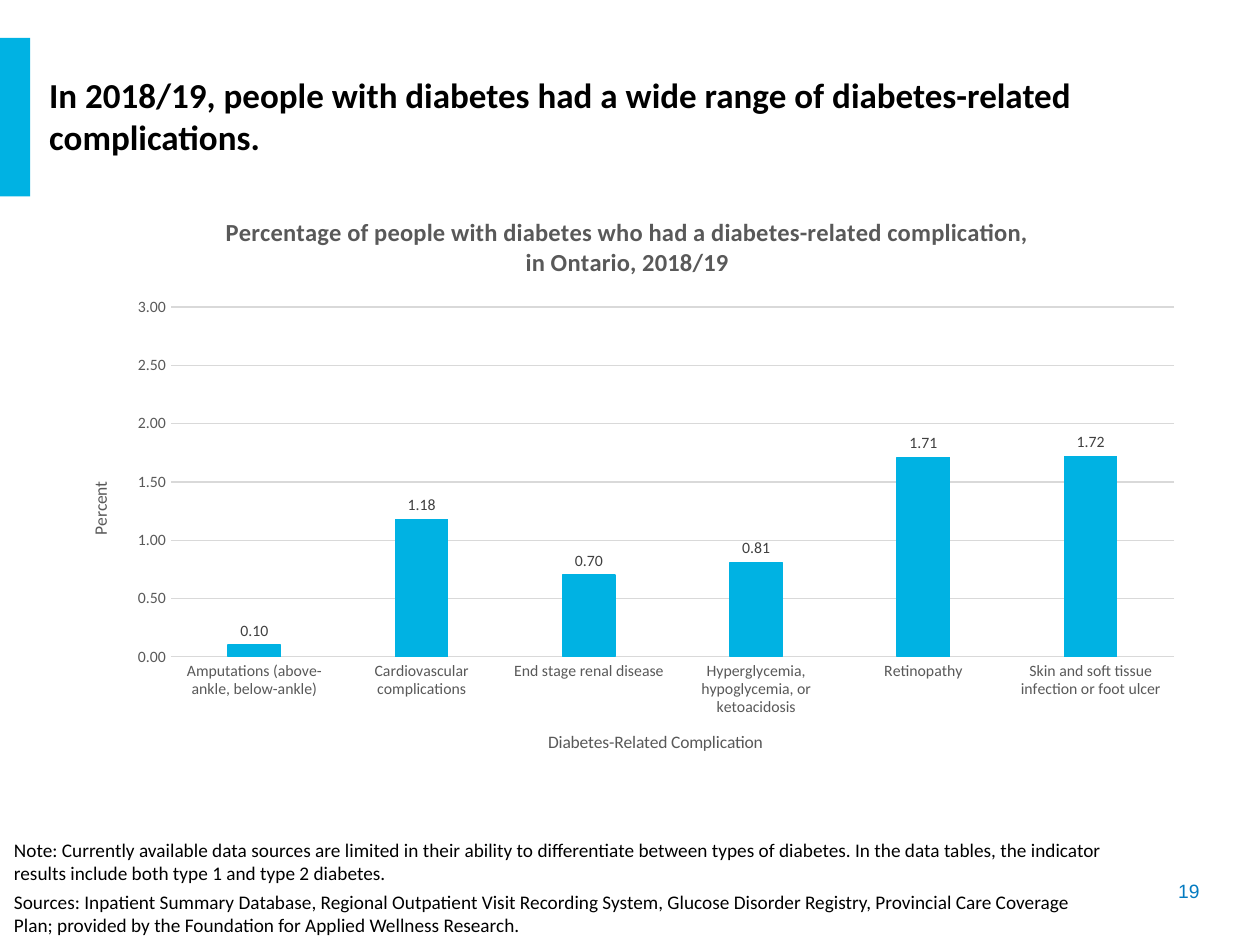
from lxml.etree import SubElement
from pptx import Presentation
from pptx.chart.data import CategoryChartData
from pptx.dml.color import RGBColor
from pptx.enum.chart import XL_CHART_TYPE as ChartType, XL_LABEL_POSITION as LabelPosition
from pptx.enum.chart import XL_TICK_MARK as TickMark
from pptx.enum.dml import MSO_LINE as LineStyle
from pptx.enum.shapes import MSO_SHAPE as Shape
from pptx.enum.text import MSO_ANCHOR as Anchor, PP_ALIGN as Align
from pptx.oxml.ns import qn
from pptx.util import Pt

# Content
HEADLINE = "In 2018/19, people with diabetes had a wide range of diabetes-related complications."
CHART_TITLE = [
    "Percentage of people with diabetes who had a diabetes-related complication,",
    "in Ontario, 2018/19",
]
CATEGORY_TITLE = ["Diabetes-Related Complication"]
VALUE_TITLE = ["Percent"]
COMPLICATIONS = {
    "Amputations (above-ankle, below-ankle)": 0.10,
    "Cardiovascular complications": 1.18,
    "End stage renal disease": 0.70,
    "Hyperglycemia, hypoglycemia, or ketoacidosis": 0.81,
    "Retinopathy": 1.71,
    "Skin and soft tissue infection or foot ulcer": 1.72,
}
FOOTNOTES = [
    "Note: Currently available data sources are limited in their ability to differentiate between "
    "types of diabetes. In the data tables, the indicator results include both type 1 and type 2 "
    "diabetes.",
    "Sources: Inpatient Summary Database, Regional Outpatient Visit Recording System, Glucose "
    "Disorder Registry, Provincial Care Coverage Plan; provided by the Foundation for Applied "
    "Wellness Research.",
]
PAGE_NUMBER = "19"

# Places: left, top, width, height in points
BOXES = {
    "page": (608.4, 498.5, 84.2, 21),
    "accent": (0, 21.6, 17.3, 90.7),
    "headline": (21, 38.5, 699, 55.4),
    "footnotes": (0.9, 474.7, 640.8, 64.8),
    "chart": (36, 110.9, 648, 334.8),
}
# Places inside the chart, as fractions of its size
PLOT_AREA = {"x": 0.095, "y": 0.193, "w": 0.885, "h": 0.597}
TITLE_PLACES = {
    "chart": {"x": 0.14, "y": 0.03},
    "category": {"x": 0.425, "y": 0.91},
    "value": {"x": 0.02, "y": 0.485},
}
NUMBER_FORMAT = "####0.00"


def color(value):
    return RGBColor.from_string(value)


def font_format(size, value, name="Calibri", bold=False):
    return {"size": Pt(size), "name": name, "bold": bold, "color": color(value)}


THEME = {
    "accent": color("00B2E3"),
    "grid": color("D9D9D9"),
    "white": color("FFFFFF"),
    "headline": font_format(20, "000000", bold=True),
    "footnotes": font_format(11, "000000"),
    "page": font_format(11, "047BC1", name="Arial"),
    "chart": font_format(10, "000000"),
    "chart title": font_format(14, "595959", bold=True),
    "axis title": font_format(10, "595959"),
    "axis": font_format(9, "595959"),
    "label": font_format(9, "404040"),
}


def style_font(font, style):
    for name, value in THEME[style].items():
        if name == "color":
            font.color.rgb = value
        else:
            setattr(font, name, value)


def set_values(target, values):
    for name, value in values.items():
        setattr(target, name, value)


def place(box):
    return [Pt(length) for length in BOXES[box]]


def write_paragraphs(frame, texts, style, values):
    for index, text in enumerate(texts):
        paragraph = frame.add_paragraph() if index else frame.paragraphs[0]
        set_values(paragraph, values)
        run = paragraph.add_run()
        run.text = text
        style_font(run.font, style)


def write(shape, texts, style, align=Align.LEFT, space=0):
    frame = shape.text_frame
    set_values(frame, {"word_wrap": True, "vertical_anchor": Anchor.MIDDLE})
    write_paragraphs(frame, texts, style, {"alignment": align, "space_before": Pt(space)})


def add_rectangle(slide, box):
    shape = slide.shapes.add_shape(Shape.RECTANGLE, *place(box))
    shape.shadow.inherit = False
    return shape


def set_layout(parent, position, values, inner=False):
    """Fix a chart part at fractions of the chart's size."""
    layout = parent.find(qn("c:layout"))
    if layout is None:
        layout = SubElement(parent, qn("c:layout"))
        parent.insert(position, layout)
    manual = SubElement(layout, qn("c:manualLayout"))
    settings = {"layoutTarget": "inner"} if inner else {}
    settings.update({"xMode": "edge", "yMode": "edge"}, **values)
    for name, value in settings.items():
        SubElement(manual, qn("c:" + name)).set("val", str(value))


def write_title(title, texts, style, position):
    write_paragraphs(title.text_frame, texts, style, {"alignment": Align.CENTER})
    set_layout(title._element, 1, TITLE_PLACES[position])


def add_complication_chart(slide):
    data = CategoryChartData(number_format=NUMBER_FORMAT)
    data.categories = list(COMPLICATIONS)
    data.add_series("Series 1", list(COMPLICATIONS.values()))
    chart = slide.shapes.add_chart(ChartType.COLUMN_CLUSTERED, *place("chart"), data).chart
    chart.has_legend = False
    style_font(chart.font, "chart")

    # Axes and titles
    category_axis, value_axis = chart.category_axis, chart.value_axis
    for axis in (category_axis, value_axis):
        set_values(axis, {"major_tick_mark": TickMark.NONE, "minor_tick_mark": TickMark.NONE})
        style_font(axis.tick_labels.font, "axis")
    set_values(value_axis, {"minimum_scale": 0, "maximum_scale": 3, "major_unit": 0.5,
                            "has_major_gridlines": True})
    set_values(value_axis.tick_labels, {"number_format": NUMBER_FORMAT,
                                        "number_format_is_linked": False})
    value_axis.format.line.fill.background()
    for line in (category_axis.format.line, value_axis.major_gridlines.format.line):
        line.color.rgb = THEME["grid"]
        line.width = Pt(0.75)
    write_title(chart.chart_title, CHART_TITLE, "chart title", "chart")
    write_title(category_axis.axis_title, CATEGORY_TITLE, "axis title", "category")
    write_title(value_axis.axis_title, VALUE_TITLE, "axis title", "value")

    # Columns and their labels
    plot = chart.plots[0]
    set_values(plot, {"gap_width": 219, "overlap": -27, "vary_by_categories": False,
                      "has_data_labels": True})
    column_format = plot.series[0].format
    column_format.fill.solid()
    column_format.fill.fore_color.rgb = THEME["accent"]
    column_format.line.color.rgb = THEME["accent"]
    column_format.line.width = Pt(0.75)
    set_values(plot.data_labels, {"show_value": True, "position": LabelPosition.OUTSIDE_END,
                                  "number_format": NUMBER_FORMAT,
                                  "number_format_is_linked": False})
    style_font(plot.data_labels.font, "label")
    plot_area = chart._chartSpace.find(".//" + qn("c:plotArea"))
    set_layout(plot_area, 0, PLOT_AREA, inner=True)


def main():
    presentation = Presentation()
    set_values(presentation, {"slide_width": Pt(720), "slide_height": Pt(540)})
    slide = presentation.slides.add_slide(presentation.slide_layouts[6])

    # Page number and accent bar
    write(slide.shapes.add_textbox(*place("page")), [PAGE_NUMBER], "page", Align.RIGHT)
    accent = add_rectangle(slide, "accent")
    accent.fill.solid()
    accent.fill.fore_color.rgb = THEME["accent"]
    accent.line.fill.background()

    # Headline
    headline = add_rectangle(slide, "headline")
    headline.fill.background()
    headline.line.color.rgb = THEME["white"]
    set_values(headline.line, {"width": Pt(3), "dash_style": LineStyle.ROUND_DOT})
    write(headline, [HEADLINE], "headline")

    # Footnotes and chart
    write(slide.shapes.add_textbox(*place("footnotes")), FOOTNOTES, "footnotes", space=3.3)
    add_complication_chart(slide)
    presentation.save("out.pptx")


if __name__ == "__main__":
    main()
